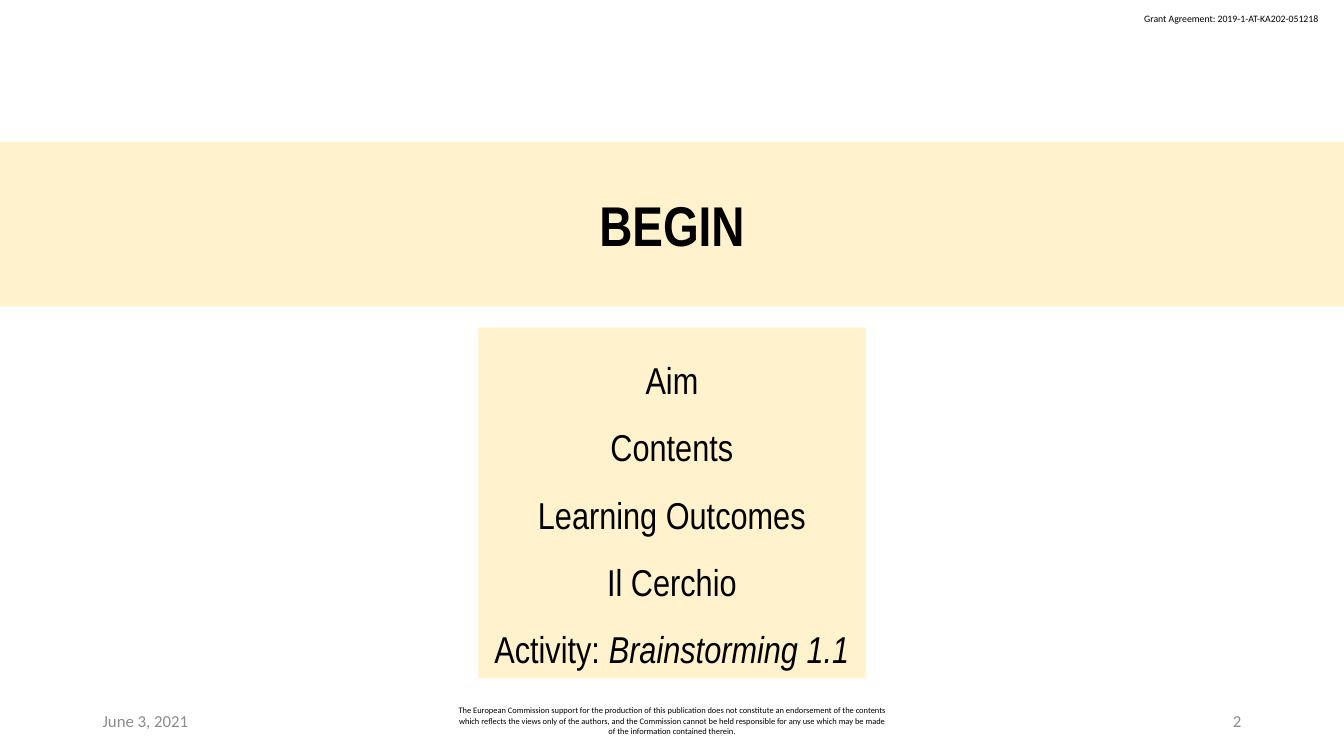
from pptx import Presentation
from pptx.dml.color import RGBColor
from pptx.enum.text import MSO_ANCHOR, MSO_AUTO_SIZE, PP_ALIGN
from pptx.oxml.xmlchemy import OxmlElement
from pptx.util import Inches, Pt

CREAM = RGBColor(0xFF, 0xF2, 0xCC)
BLACK = RGBColor(0, 0, 0)
GREY = RGBColor(0x8C, 0x8C, 0x8C)
LEFT, CENTER, RIGHT = PP_ALIGN.LEFT, PP_ALIGN.CENTER, PP_ALIGN.RIGHT
TOP, MIDDLE = MSO_ANCHOR.TOP, MSO_ANCHOR.MIDDLE
NO_FIT = MSO_AUTO_SIZE.NONE
HEADING_FONT, SMALL_FONT = "Arial Narrow", "Calibri"
WIDTH, HEIGHT = 13.33, 7.5

AGENDA = [
    [("Aim", False)],
    [("Contents", False)],
    [("Learning Outcomes", False)],
    [("Il Cerchio", False)],
    [("Activity: ", False), ("Brainstorming 1.1", True)],
]
DISCLAIMER = (
    "The European Commission support for the production of this publication "
    "does not constitute an endorsement of the contents which reflects the views "
    "only of the authors, and the Commission cannot be held responsible for any "
    "use which may be made of the information contained therein."
)


def place(shape, box):
    shape.left, shape.top, shape.width, shape.height = map(Inches, box)


def write(para, text, size, font=SMALL_FONT, color=BLACK, bold=False,
          italic=False, align=LEFT):
    para.alignment = align
    span = para.add_run()
    span.text = text
    span.font.name = font
    span.font.size = Pt(size)
    span.font.color.rgb = color
    span.font.bold = bold
    span.font.italic = italic


def add_label(page, box, text, size, wrap=True, anchor=MIDDLE, **style):
    label = page.shapes.add_textbox(*map(Inches, box))
    frame = label.text_frame
    frame.word_wrap = wrap
    frame.vertical_anchor = anchor
    write(frame.paragraphs[0], text, size, **style)


def fill_panel(panel, box, anchor):
    place(panel, box)
    panel.fill.solid()
    panel.fill.fore_color.rgb = CREAM
    frame = panel.text_frame
    frame.auto_size = NO_FIT
    frame.word_wrap = True
    frame.vertical_anchor = anchor
    frame.margin_left = frame.margin_right = Inches(0.13)
    frame.margin_top = frame.margin_bottom = Inches(0.07)
    return frame


def build_banner(page, box):
    frame = fill_panel(page.shapes.title, box, MIDDLE)
    write(frame.paragraphs[0], "BEGIN", 40, font=HEADING_FONT, bold=True,
          align=CENTER)


def build_agenda(page, box):
    frame = fill_panel(page.placeholders[1], box, TOP)
    for index, parts in enumerate(AGENDA):
        para = frame.add_paragraph() if index else frame.paragraphs[0]
        para.line_spacing = 1.5
        para.space_before = Pt(0)
        properties = para._p.get_or_add_pPr()
        properties.set("marL", "0")
        properties.set("indent", "0")
        properties.append(OxmlElement("a:buNone"))
        for text, italic in parts:
            write(para, text, 26.7, font=HEADING_FONT, italic=italic,
                  align=CENTER)


def build_footer(page, box):
    left, top, width, height = box
    side = 3
    middle = 4.5
    add_label(page, (left, top, side, height), "June 3, 2021", 12, color=GREY)
    add_label(page, (left + (width - middle) / 2, top, middle, height),
              DISCLAIMER, 6, align=CENTER)
    add_label(page, (left + width - side, top, side, height), "2", 12,
              color=GREY, align=RIGHT)


def main():
    deck = Presentation()
    deck.slide_width, deck.slide_height = Inches(WIDTH), Inches(HEIGHT)
    page = deck.slides.add_slide(deck.slide_layouts[1])
    add_label(page, (11.25, 0.08, 1.97, 0.22),
              "Grant Agreement: 2019-1-AT-KA202-051218", 7,
              wrap=False, anchor=TOP)
    build_banner(page, (0, 1.41, WIDTH, 1.63))
    agenda_width = 3.84
    build_agenda(page, ((WIDTH - agenda_width) / 2, 3.25, agenda_width, 3.48))
    margin = 0.92
    build_footer(page, (margin, 6.95, WIDTH - 2 * margin, 0.4))
    deck.save("out.pptx")


if __name__ == "__main__":
    main()
